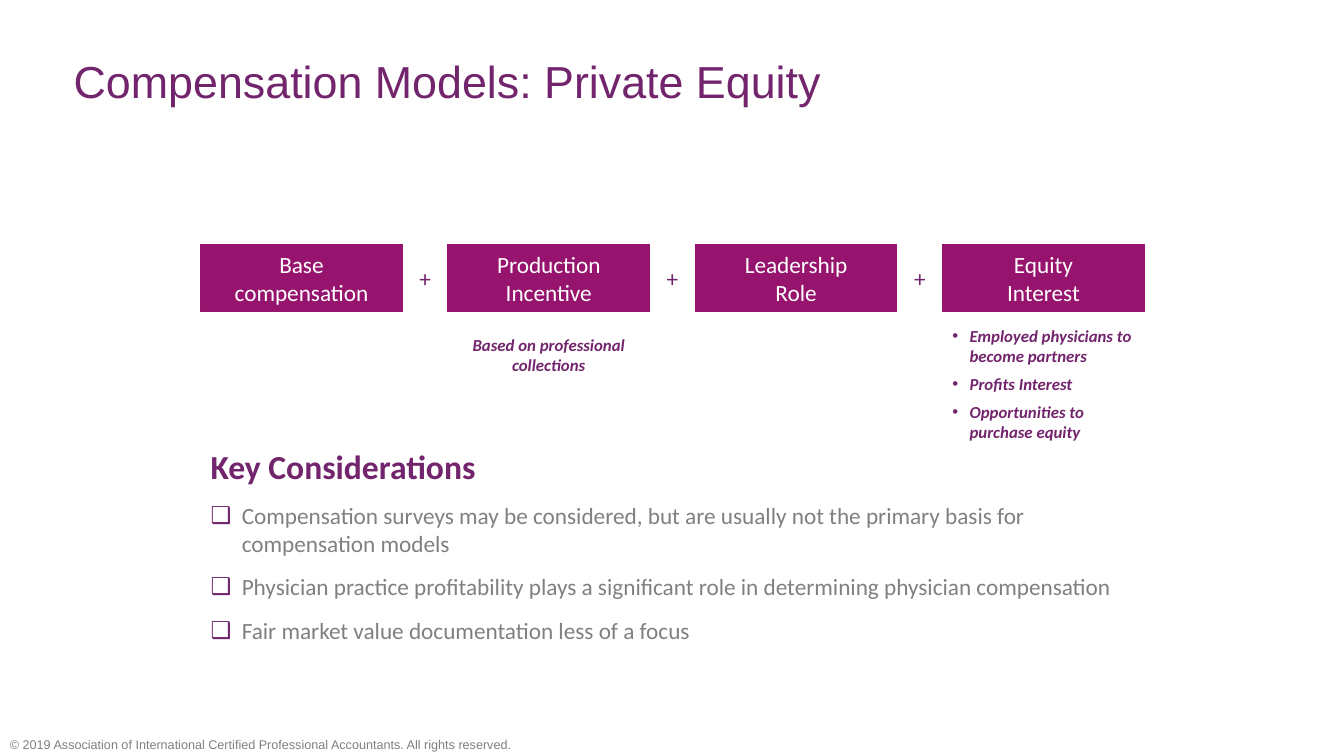
from lxml.etree import SubElement
from pptx import Presentation
from pptx.dml.color import RGBColor
from pptx.enum.shapes import MSO_SHAPE
from pptx.enum.text import MSO_ANCHOR as Anchor, PP_ALIGN as Align
from pptx.oxml.ns import qn
from pptx.util import Inches, Pt

COLORS = {"plum": "72246C", "magenta": "96146E", "gray": "808080", "white": "FFFFFF"}
LEFT, PITCH, BOX_W = 1.99, 2.453, 2
BOX_TOP, BOX_H = 2.43, 0.66
GAP = PITCH - BOX_W


def write(paragraph, text, size, color, font="Calibri", bold=False, italic=False,
          align=Align.LEFT, after=0, bullet=None, indent=0):
    if bullet:
        props = paragraph._p.get_or_add_pPr()
        props.set("marL", str(Inches(indent)))
        props.set("indent", str(-Inches(indent)))
        bullet_color = SubElement(props, qn("a:buClr"))
        SubElement(bullet_color, qn("a:srgbClr"), val=COLORS["plum"])
        SubElement(props, qn("a:buFont"), typeface="Arial")
        SubElement(props, qn("a:buChar"), char=bullet)
    paragraph.alignment = align
    paragraph.space_after = Pt(after)
    run = paragraph.add_run()
    run.text = text
    run.font.size = Pt(size)
    run.font.name = font
    run.font.bold = bold
    run.font.italic = italic
    run.font.color.rgb = RGBColor.from_string(COLORS[color])


def text_area(left, top, width, height, anchor=Anchor.MIDDLE):
    frame = slide.shapes.add_textbox(
        Inches(left), Inches(top), Inches(width), Inches(height)).text_frame
    frame.word_wrap = True
    frame.vertical_anchor = anchor
    return frame


prs = Presentation()
prs.slide_width, prs.slide_height = Inches(13.33), Inches(7.5)
slide = prs.slides.add_slide(prs.slide_layouts[5])

title = slide.shapes.title
title.left, title.top, title.width, title.height = map(Inches, (0.73, 0.53, 11.33, 0.87))
heading = title.text_frame
heading.margin_left = heading.margin_right = heading.margin_top = heading.margin_bottom = 0
heading.vertical_anchor = Anchor.TOP
write(heading.paragraphs[0], "Compensation Models: Private Equity", 32, "plum", font="Arial")

copyright_line = text_area(0, 7.26, 5.41, 0.25, Anchor.TOP)
write(copyright_line.paragraphs[0],
      "© 2019 Association of International Certified Professional Accountants. All rights reserved.",
      9, "gray", font="Arial")

components = [["Base compensation"], ["Production Incentive"],
              ["Leadership", "Role"], ["Equity", "Interest"]]
for column, lines in enumerate(components):
    left = LEFT + column * PITCH
    component = slide.shapes.add_shape(
        MSO_SHAPE.RECTANGLE, Inches(left), Inches(BOX_TOP), Inches(BOX_W), Inches(BOX_H))
    component.shadow.inherit = False
    component.fill.solid()
    component.fill.fore_color.rgb = RGBColor.from_string(COLORS["magenta"])
    component.line.color.rgb = RGBColor.from_string(COLORS["magenta"])
    component.line.width = Pt(0.75)
    label = component.text_frame
    label.word_wrap = True
    label.vertical_anchor = Anchor.MIDDLE
    for row, line in enumerate(lines):
        paragraph = label.add_paragraph() if row else label.paragraphs[0]
        write(paragraph, line, 16.6, "white", align=Align.CENTER)
    if column:
        plus = text_area(left - GAP + 0.05, 2.57, GAP - 0.1, 0.38)
        write(plus.paragraphs[0], "+", 16.6, "plum", align=Align.CENTER)

incentive_basis = text_area(LEFT + PITCH, 3.27, BOX_W, 0.5)
write(incentive_basis.paragraphs[0], "Based on professional collections", 12, "plum",
      bold=True, italic=True, align=Align.CENTER)

considerations = text_area(LEFT, 4.37, 3 * PITCH + BOX_W, 2.12, Anchor.TOP)
write(considerations.paragraphs[0], "Key Considerations", 24, "plum", bold=True, after=11.1)
for point in [
    "Compensation surveys may be considered, but are usually not the primary basis for compensation models",
    "Physician practice profitability plays a significant role in determining physician compensation",
    "Fair market value documentation less of a focus",
]:
    write(considerations.add_paragraph(), point, 16.6, "gray",
          after=11.1, bullet="❑", indent=0.31)

equity_terms = text_area(LEFT + 3 * PITCH, 3.17, BOX_W, 1.28)
for row, term in enumerate(["Employed physicians to become partners", "Profits Interest",
                            "Opportunities to purchase equity"]):
    paragraph = equity_terms.add_paragraph() if row else equity_terms.paragraphs[0]
    write(paragraph, term, 12, "plum", bold=True, italic=True,
          after=5.5, bullet="•", indent=0.17)

prs.save("out.pptx")
